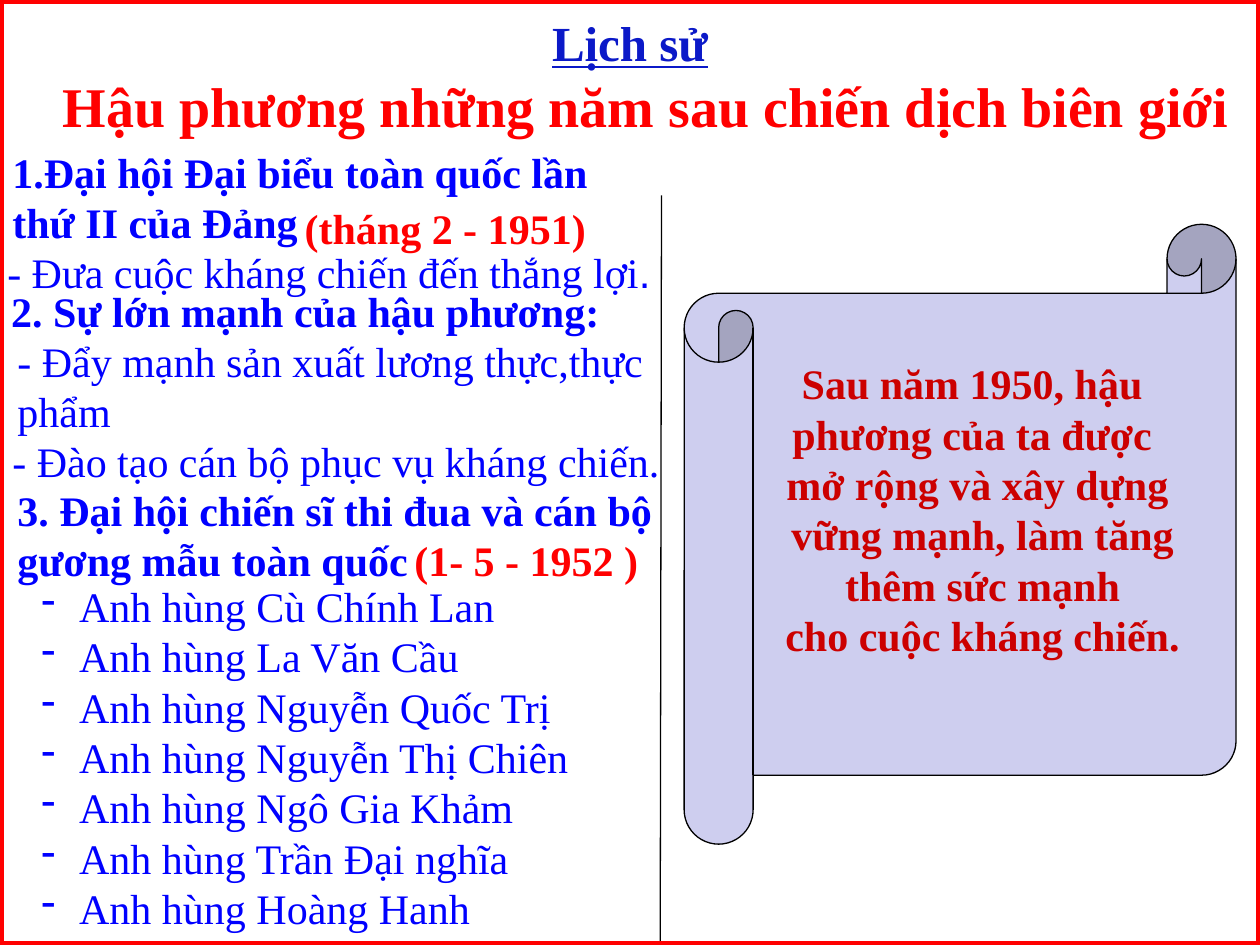
import dataclasses

import lxml.etree
import pptx
import pptx.dml.color
import pptx.enum.shapes
import pptx.enum.text
import pptx.oxml.ns
import pptx.util

Inches = pptx.util.Inches
Anchor = pptx.enum.text.MSO_ANCHOR
Align = pptx.enum.text.PP_ALIGN
Shape = pptx.enum.shapes.MSO_SHAPE


@dataclasses.dataclass(frozen=True)
class Theme:
    font: str = "Times New Roman"
    stop_font: str = "Arial"
    blue: str = "0000FF"
    red: str = "FF0000"
    subject: str = "0B19C8"
    summary: str = "CC0000"
    scroll: str = "CECEEF"
    black: str = "000000"
    body_size: int = 24
    subject_size: int = 28
    title_size: int = 32
    thin: float = 0.75
    thick: float = 4.5


THEME = Theme()

HEROES = [
    "Anh hùng Cù Chính Lan",
    "Anh hùng La Văn Cầu",
    "Anh hùng Nguyễn Quốc Trị",
    "Anh hùng Nguyễn Thị Chiên",
    "Anh hùng Ngô Gia Khảm",
    "Anh hùng Trần Đại nghĩa",
    "Anh hùng Hoàng Hanh",
]

SUMMARY = [
    "Sau năm 1950, hậu ",
    "phương của ta được ",
    "mở rộng và xây dựng",
    " vững mạnh, làm tăng",
    " thêm sức mạnh",
    " cho cuộc kháng chiến.",
]


def rgb(color):
    return pptx.dml.color.RGBColor.from_string(color)


def format_span(span, color, size, bold):
    span.font.name = THEME.font
    span.font.size = pptx.util.Pt(size)
    span.font.bold = bold
    span.font.color.rgb = rgb(color)


def write_lines(frame, lines, color, size=THEME.body_size, bold=False, align=Align.LEFT):
    frame.text = "\n".join(lines)
    for para in frame.paragraphs:
        para.alignment = align
        for span in para.runs:
            format_span(span, color, size, bold)


def add_text(page, place, lines, color, anchor=Anchor.MIDDLE, wrap=True, **style):
    box = page.shapes.add_textbox(*map(Inches, place))
    frame = box.text_frame
    write_lines(frame, lines, color, **style)
    frame.word_wrap = wrap
    frame.auto_size = pptx.enum.text.MSO_AUTO_SIZE.SHAPE_TO_FIT_TEXT
    frame.vertical_anchor = anchor
    return frame


def set_bullet(para, kind, margin=0, **attributes):
    properties = para._p.get_or_add_pPr()
    properties.set("marL", str(Inches(margin)))
    properties.set("indent", str(-Inches(margin)))
    lxml.etree.SubElement(properties, pptx.oxml.ns.qn(kind), attributes)


def add_panel(page, kind, place, fill, line, width):
    panel = page.shapes.add_shape(kind, *map(Inches, place))
    panel.shadow.inherit = False
    if fill:
        panel.fill.solid()
        panel.fill.fore_color.rgb = rgb(fill)
    else:
        panel.fill.background()
    panel.line.color.rgb = rgb(line)
    panel.line.width = pptx.util.Pt(width)
    return panel


def add_divider(page, start, end):
    divider = page.shapes.add_connector(
        pptx.enum.shapes.MSO_CONNECTOR.STRAIGHT, *map(Inches, start + end))
    divider.line.color.rgb = rgb(THEME.black)
    divider.line.width = pptx.util.Pt(THEME.thin)
    lxml.etree.SubElement(divider._element.spPr, pptx.oxml.ns.qn("a:effectLst"))


def add_outline(page):
    congress = add_text(page, (0, 1.11, 5.55, 0.91),
                        ["Đại hội Đại biểu toàn quốc lần", "thứ II của Đảng"],
                        THEME.blue, anchor=Anchor.TOP, bold=True)
    set_bullet(congress.paragraphs[0], "a:buAutoNum", type="arabicPeriod")
    add_divider(page, (5.25, 1.55), (5.24, 7.5))
    add_text(page, (2.32, 1.55, 2.46, 0.51), ["(tháng 2 - 1951)"],
             THEME.red, wrap=False, bold=True)
    victory = add_text(page, (-0.04, 1.91, 6.06, 0.5),
                       ["- Đưa cuộc kháng chiến đến thắng lợi"], THEME.blue)
    stop = victory.paragraphs[0].add_run()
    stop.text = "."
    format_span(stop, THEME.blue, THEME.body_size, False)
    stop.font.name = THEME.stop_font
    add_text(page, (-0.01, 2.22, 5.1, 0.5), ["2. Sự lớn mạnh của hậu phương:"],
             THEME.blue, wrap=False, bold=True)
    add_text(page, (0.04, 2.61, 5.43, 0.9),
             ["- Đẩy mạnh sản xuất lương thực,thực phẩm"], THEME.blue)
    add_text(page, (0, 3.41, 5.43, 0.5),
             ["- Đào tạo cán bộ phục vụ kháng chiến."], THEME.blue, wrap=False)
    add_text(page, (0.04, 3.79, 5.43, 0.91),
             ["3. Đại hội chiến sĩ thi đua và cán bộ gương mẫu toàn quốc"],
             THEME.blue, bold=True)
    add_text(page, (3.19, 4.19, 2, 0.5), ["(1- 5 - 1952 )"],
             THEME.red, wrap=False, bold=True)
    heroes = add_text(page, (0.23, 4.54, 4.53, 2.93), HEROES, THEME.blue)
    for para in heroes.paragraphs:
        set_bullet(para, "a:buChar", margin=0.3, char="-")


def add_summary(page):
    scroll = add_panel(page, Shape.HORIZONTAL_SCROLL, (5.43, 1.78, 4.38, 4.92),
                       THEME.scroll, THEME.black, THEME.thin)
    scroll.adjustments[0] = 0.125
    frame = scroll.text_frame
    write_lines(frame, SUMMARY, THEME.summary, bold=True, align=Align.CENTER)
    frame.word_wrap = False
    frame.vertical_anchor = Anchor.MIDDLE
    frame.margin_bottom = Inches(0.45)


def add_headings(page):
    title = add_text(page, (-0.04, 0.52, 10, 0.63),
                     ["Hậu phương những năm sau chiến dịch biên giới"],
                     THEME.red, anchor=Anchor.TOP, size=THEME.title_size, bold=True)
    title.margin_left = Inches(0.54)
    subject = add_text(page, (0, 0.05, 10, 0.57), ["Lịch sử"], THEME.subject,
                       anchor=Anchor.TOP, size=THEME.subject_size, bold=True,
                       align=Align.CENTER)
    subject.paragraphs[0].runs[0].font.underline = True


def main():
    deck = pptx.Presentation()
    deck.slide_width = Inches(10)
    deck.slide_height = Inches(7.5)
    page = deck.slides.add_slide(deck.slide_layouts[6])
    add_outline(page)
    add_summary(page)
    add_panel(page, Shape.RECTANGLE, (0, 0, 10, 7.5), None, THEME.red, THEME.thick)
    add_headings(page)
    deck.save("out.pptx")


if __name__ == "__main__":
    main()
